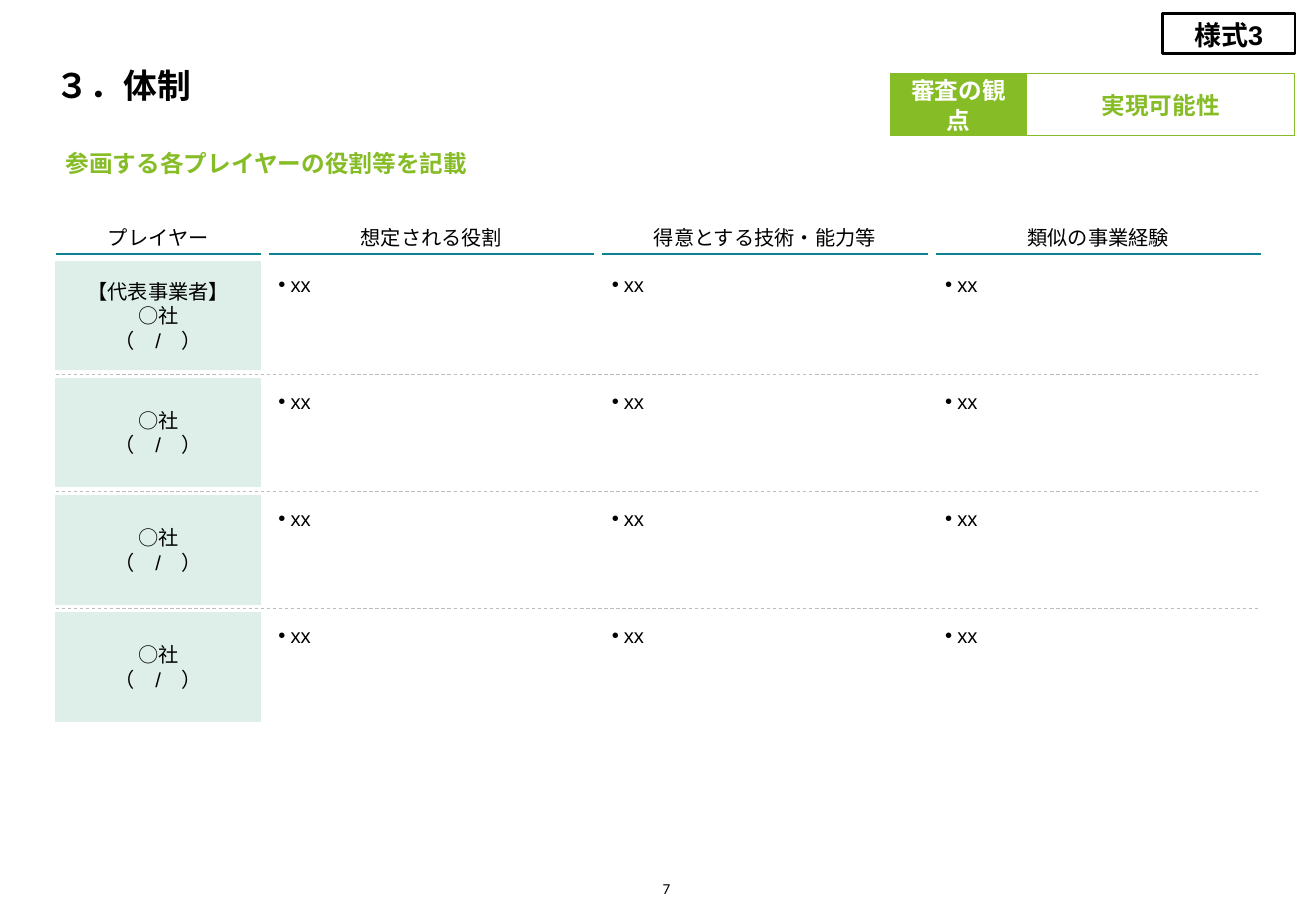
from lxml.etree import SubElement
from pptx import Presentation
from pptx.dml.color import RGBColor
from pptx.enum.dml import MSO_LINE
from pptx.enum.shapes import MSO_CONNECTOR, MSO_SHAPE
from pptx.enum.text import MSO_ANCHOR, PP_ALIGN
from pptx.oxml.ns import qn
from pptx.util import Pt

# Content
TITLE = "３．体制"
SUBTITLE = "参画する各プレイヤーの役割等を記載"
FORM_LABEL = "様式3"
CRITERION = ("審査の観点", "実現可能性")
PAGE_NUMBER = "7"
HEADERS = ["プレイヤー", "想定される役割", "得意とする技術・能力等", "類似の事業経験"]
COMPANY = "○社\n（　/　）"
ROWS = [
    ("【代表事業者】\n" + COMPANY, "xx", "xx", "xx"),
    (COMPANY, "xx", "xx", "xx"),
    (COMPANY, "xx", "xx", "xx"),
    (COMPANY, "xx", "xx", "xx"),
]

# Colours
BLACK, WHITE = "000000", "FFFFFF"
GREEN, TEAL, MINT, GREY = "86BC25", "0D8390", "DDEFE8", "BBBCBC"

# Grid in points
LEFT, COLUMN_GAP = 33.1, 4.7
COLUMN_WIDTHS = [121.5, 192.9, 192.9, 192.9]
COLUMN_LEFTS = [LEFT + sum(COLUMN_WIDTHS[:i]) + i * COLUMN_GAP for i in range(4)]
RIGHT = COLUMN_LEFTS[-1] + COLUMN_WIDTHS[-1]
HEADER_TOP, HEADER_HEIGHT = 128.2, 22.4
ROW_TOP, ROW_HEIGHT, ROW_GAP = 155, 64.3, 5.1
INSETS = (5.7, 5.7, 5.7, 5.7)


def color(value):
    return RGBColor.from_string(value)


def write(shape, text, size, ink=BLACK, font="Arial", bold=False,
          align=PP_ALIGN.CENTER, anchor=MSO_ANCHOR.MIDDLE, insets=INSETS,
          spacing=1.06, wrap=True, bullet=False):
    frame = shape.text_frame
    frame.word_wrap = wrap
    frame.vertical_anchor = anchor
    (frame.margin_left, frame.margin_top,
     frame.margin_right, frame.margin_bottom) = map(Pt, insets)
    paragraph = frame.paragraphs[0]
    paragraph.text = text
    paragraph.alignment = align
    paragraph.line_spacing = spacing
    if bullet:
        properties = paragraph._p.get_or_add_pPr()
        properties.set("marL", str(Pt(7.2)))
        properties.set("indent", str(Pt(-7.2)))
        SubElement(properties, qn("a:buFont"), typeface="Arial")
        SubElement(properties, qn("a:buChar"), char="•")
    for run in paragraph.runs:
        run.font.size = Pt(size)
        run.font.name = font
        run.font.bold = bold
        run.font.color.rgb = color(ink)


def add_text(slide, box, text, size, **style):
    write(slide.shapes.add_textbox(*map(Pt, box)), text, size, **style)


def add_box(slide, box, fill, border, border_width, text, size, **style):
    shape = slide.shapes.add_shape(MSO_SHAPE.RECTANGLE, *map(Pt, box))
    shape.shadow.inherit = False
    shape.fill.solid()
    shape.fill.fore_color.rgb = color(fill)
    shape.line.color.rgb = color(border)
    shape.line.width = Pt(border_width)
    write(shape, text, size, **style)


def add_rule(slide, left, right, y, ink, width, dash=None):
    rule = slide.shapes.add_connector(
        MSO_CONNECTOR.STRAIGHT, Pt(left), Pt(y), Pt(right), Pt(y))
    rule.line.color.rgb = color(ink)
    rule.line.width = Pt(width)
    if dash:
        rule.line.dash_style = dash
    SubElement(rule._element.spPr, qn("a:effectLst"))


def add_heading(slide):
    add_text(slide, (LEFT, 14.4, 714.3, 48.2), TITLE, 20, font="Calibri", bold=True,
             align=PP_ALIGN.LEFT, anchor=MSO_ANCHOR.BOTTOM, insets=(0, 0, 0, 0), spacing=1)
    add_text(slide, (LEFT, 80, 342.7, 33.8), SUBTITLE, 14, ink=GREEN, font="Calibri",
             bold=True, align=PP_ALIGN.LEFT, insets=(5.7, 0, 0, 0), spacing=1, wrap=False)
    add_box(slide, (689, 7.9, 78.5, 23.8), WHITE, BLACK, 1.5, FORM_LABEL, 16, bold=True)
    label, value = CRITERION
    add_box(slide, (608.4, 43.5, 159.1, 36.7), WHITE, GREEN, 0.5, value, 14,
            ink=GREEN, bold=True)
    add_box(slide, (528, 43.5, 80.2, 36.7), GREEN, GREEN, 0.5, label, 14,
            ink=WHITE, bold=True)


def add_player_grid(slide):
    # Column headers
    for left, width, header in zip(COLUMN_LEFTS, COLUMN_WIDTHS, HEADERS):
        add_text(slide, (left, HEADER_TOP, width, HEADER_HEIGHT), header, 12,
                 anchor=MSO_ANCHOR.BOTTOM, insets=(2.8, 2.8, 2.8, 2.8))
        add_rule(slide, left, left + width, HEADER_TOP + HEADER_HEIGHT, TEAL, 1.5)

    # Player rows with dashed dividers between them
    for index, (player, *details) in enumerate(ROWS):
        top = ROW_TOP + index * (ROW_HEIGHT + ROW_GAP)
        add_box(slide, (LEFT, top, COLUMN_WIDTHS[0], ROW_HEIGHT), MINT, MINT, 0.5,
                player, 12, spacing=1)
        for left, width, detail in zip(COLUMN_LEFTS[1:], COLUMN_WIDTHS[1:], details):
            add_text(slide, (left, top, width, ROW_HEIGHT), detail, 12,
                     align=PP_ALIGN.LEFT, anchor=MSO_ANCHOR.TOP, bullet=True)
        if index:
            add_rule(slide, LEFT, RIGHT, top - ROW_GAP / 2, GREY, 0.5, MSO_LINE.DASH)


def main():
    presentation = Presentation()
    presentation.slide_width, presentation.slide_height = Pt(780), Pt(540)
    slide = presentation.slides.add_slide(presentation.slide_layouts[6])
    add_heading(slide)
    add_player_grid(slide)
    # Page number
    add_text(slide, (383, 518.4, 14.4, 13.7), PAGE_NUMBER, 9, font="Calibri",
             align=PP_ALIGN.RIGHT, anchor=MSO_ANCHOR.BOTTOM, insets=(0, 0, 0, 0),
             spacing=1, wrap=False)
    presentation.save("out.pptx")


if __name__ == "__main__":
    main()
